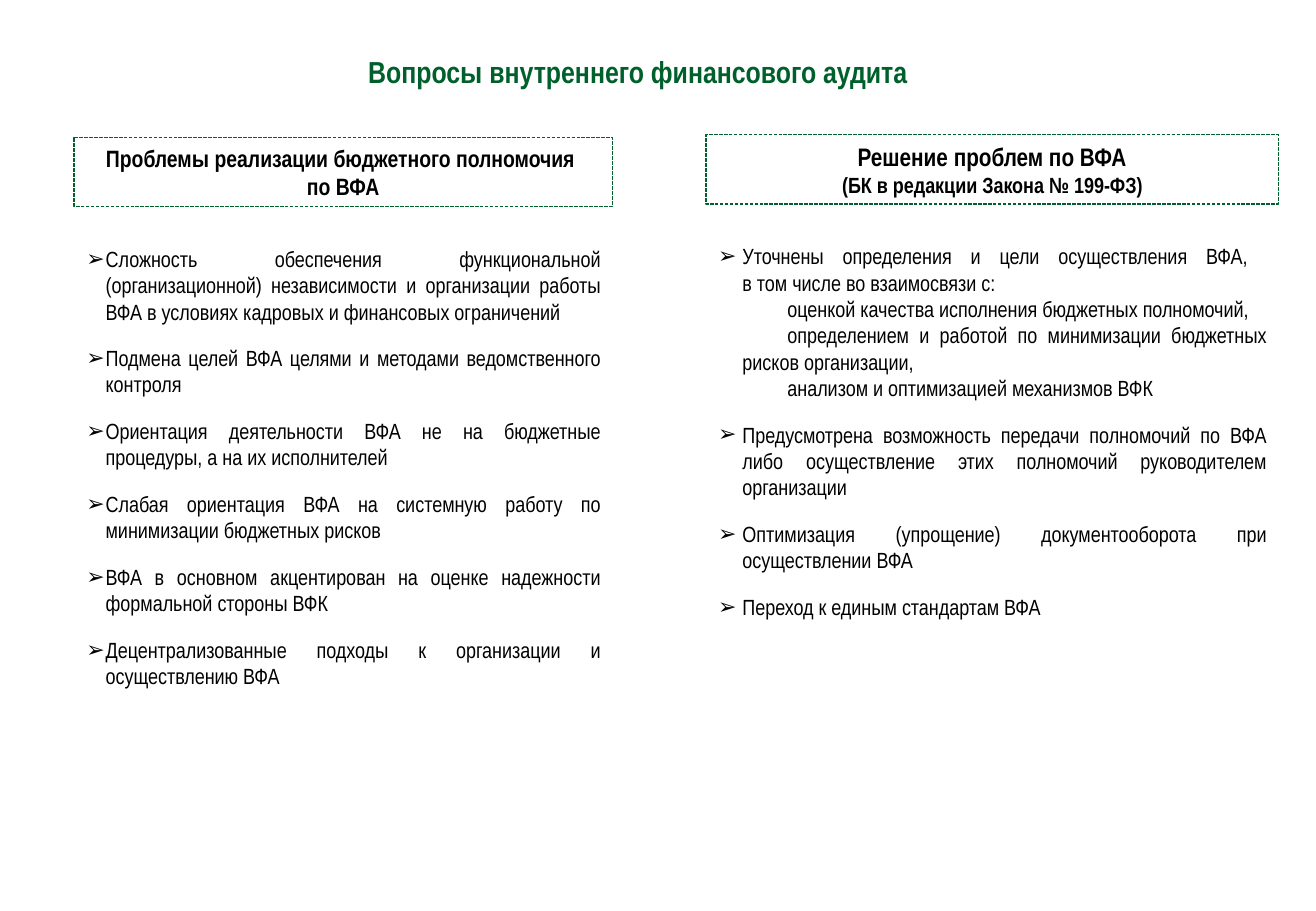
from copy import deepcopy
from dataclasses import dataclass

from lxml import etree
from pptx import Presentation
from pptx.dml.color import RGBColor
from pptx.enum.dml import MSO_LINE
from pptx.enum.shapes import MSO_SHAPE
from pptx.enum.text import MSO_ANCHOR, MSO_AUTO_SIZE, PP_ALIGN
from pptx.oxml.ns import qn
from pptx.util import Inches, Pt

RECT = MSO_SHAPE.RECTANGLE
DASH = MSO_LINE.SQUARE_DOT
TOP, MIDDLE = MSO_ANCHOR.TOP, MSO_ANCHOR.MIDDLE
CENTER, JUSTIFY = PP_ALIGN.CENTER, PP_ALIGN.JUSTIFY
FIXED = MSO_AUTO_SIZE.NONE


@dataclass(frozen=True)
class Theme:
    """Fonts, colours and type sizes."""
    font: str = "Arial Narrow"
    green: RGBColor = RGBColor(0x00, 0x60, 0x2B)
    black: RGBColor = RGBColor(0, 0, 0)
    title: int = 18
    head: int = 14
    lead: int = 15
    body: int = 13
    gap: int = 12
    mark: str = "➢"


class Page:
    """Draws styled elements on one slide."""

    def __init__(self, slide, theme):
        """Keep the slide and its theme."""
        self.slide = slide
        self.theme = theme

    def place(self, shape, box):
        """Move a shape to a box given in inches."""
        shape.left, shape.top, shape.width, shape.height = map(Inches, box)

    def frame(self, shape, anchor):
        """Set the wrapping and anchor of a text frame."""
        frame = shape.text_frame
        frame.word_wrap = True
        frame.auto_size = FIXED
        frame.vertical_anchor = anchor
        return frame

    def style(self, para, sizes, color, align, bold=False):
        """Format the runs and line breaks of a paragraph."""
        para.alignment = align
        for run, size in zip(para.runs, sizes):
            font = run.font
            font.name = self.theme.font
            font.size = Pt(size)
            font.bold = bold
            font.color.rgb = color
        for brk in para._p.findall(qn("a:br")):
            brk.append(deepcopy(para.runs[0].font._element))

    def title(self, text, box):
        """Fill the title placeholder."""
        shape = self.slide.shapes.title
        self.place(shape, box)
        para = self.frame(shape, TOP).paragraphs[0]
        para.text = text
        para.line_spacing = Pt(28)
        self.style(para, [self.theme.title], self.theme.green, CENTER, True)

    def head(self, text, sizes, box):
        """Add a dashed heading box."""
        shape = self.slide.shapes.add_shape(RECT, *map(Inches, box))
        shape.shadow.inherit = False
        shape.fill.background()
        shape.line.color.rgb = self.theme.green
        shape.line.width = Pt(0.75)
        shape.line.dash_style = DASH
        para = self.frame(shape, MIDDLE).paragraphs[0]
        para.text = text
        self.style(para, sizes, self.theme.black, CENTER, True)

    def bullet(self, para, left, marked):
        """Set the indent and the bullet of a paragraph."""
        props = para._p.get_or_add_pPr()
        props.set("marL", str(Inches(left)))
        props.set("indent", str(Inches(-left if marked else 0.37)))
        if marked:
            etree.SubElement(props, qn("a:buFont")).set("typeface", "Arial")
            etree.SubElement(props, qn("a:buChar")).set("char", self.theme.mark)
        else:
            etree.SubElement(props, qn("a:buNone"))

    def points(self, index, items, left, box):
        """Fill a body placeholder with items and their sub-items."""
        shape = self.slide.placeholders[index]
        self.place(shape, box)
        frame = self.frame(shape, TOP)
        lines = [(text, rank == 0, rank == len(item) - 1)
                 for item in items for rank, text in enumerate(item)]
        for row, (text, marked, last) in enumerate(lines):
            para = frame.add_paragraph() if row else frame.paragraphs[0]
            para.text = text
            para.space_before = Pt(0)
            para.space_after = Pt(self.theme.gap if last else 0)
            self.style(para, [self.theme.body] * 2, self.theme.black, JUSTIFY)
            self.bullet(para, left, marked)


ISSUES = [
    ["Сложность обеспечения функциональной (организационной) независимости "
     "и организации работы ВФА в условиях кадровых и финансовых ограничений"],
    ["Подмена целей ВФА целями и методами ведомственного контроля"],
    ["Ориентация деятельности ВФА не на бюджетные процедуры, а на их исполнителей"],
    ["Слабая ориентация ВФА на системную работу по минимизации бюджетных рисков"],
    ["ВФА в основном акцентирован на оценке надежности формальной стороны ВФК"],
    ["Децентрализованные подходы к организации и осуществлению ВФА"],
]
ANSWERS = [
    ["Уточнены определения и цели осуществления ВФА, \vв том числе во взаимосвязи с:",
     "оценкой качества исполнения бюджетных полномочий,",
     "определением и работой по минимизации бюджетных рисков организации, ",
     "анализом и оптимизацией механизмов ВФК"],
    ["Предусмотрена возможность передачи полномочий по ВФА либо "
     "осуществление этих полномочий руководителем организации"],
    ["Оптимизация (упрощение) документооборота при осуществлении ВФА"],
    ["Переход к единым стандартам ВФА"],
]


def main():
    """Build and save the slide."""
    deck = Presentation()
    deck.slide_width, deck.slide_height = Inches(10.83), Inches(7.5)
    theme = Theme()
    page = Page(deck.slides.add_slide(deck.slide_layouts[3]), theme)
    page.title("Вопросы внутреннего финансового аудита", (1.24, 0.3, 8.02, 0.47))
    page.head("Проблемы реализации бюджетного полномочия \vпо ВФА",
              [theme.head] * 2, (0.61, 1.13, 4.43, 0.57))
    page.head("Решение проблем по ВФА\v(БК в редакции Закона № 199-ФЗ)",
              [theme.lead, theme.body], (5.81, 1.11, 4.71, 0.57))
    page.points(1, ISSUES, 0.16, (0.61, 1.97, 4.43, 3.79))
    page.points(2, ANSWERS, 0.2, (5.81, 1.95, 4.71, 3.23))
    deck.save("out.pptx")


if __name__ == "__main__":
    main()
